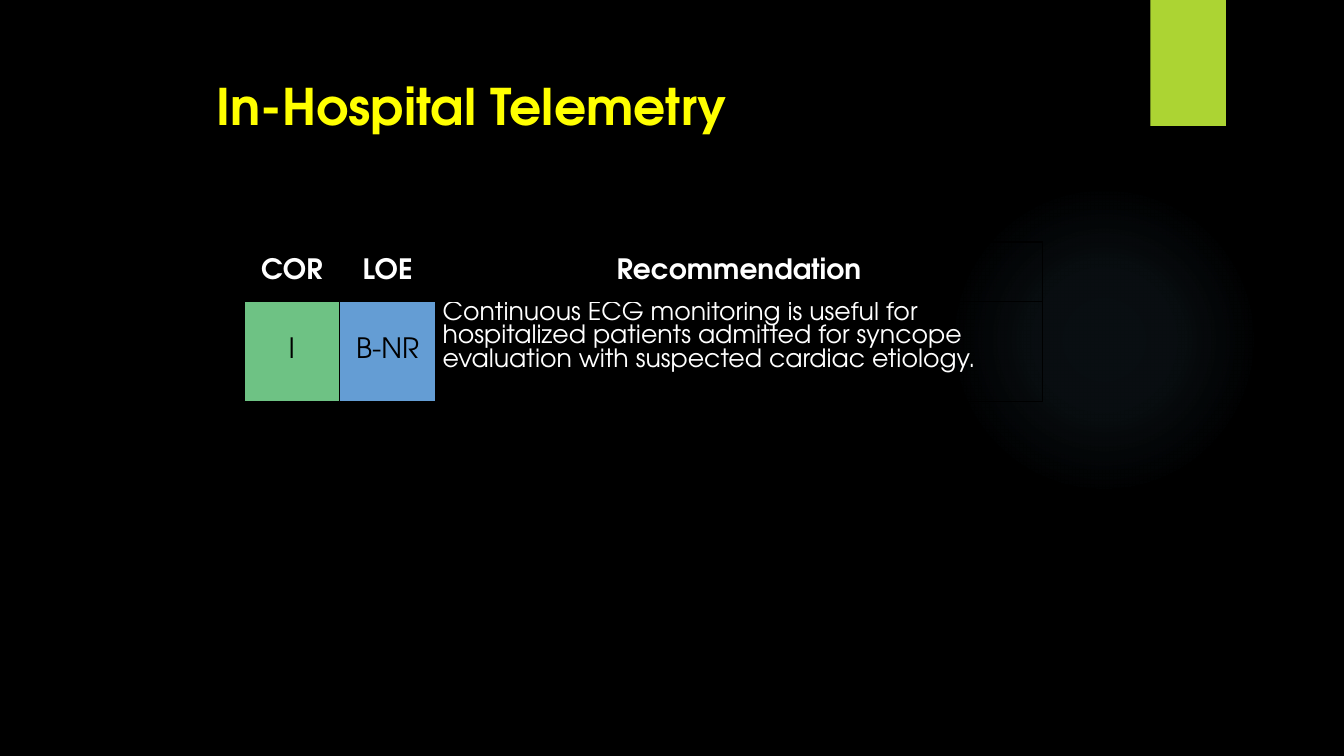
from dataclasses import dataclass

from lxml.etree import SubElement
from pptx import Presentation
from pptx.dml.color import RGBColor
from pptx.enum.shapes import MSO_SHAPE
from pptx.enum.text import MSO_ANCHOR, PP_ALIGN
from pptx.oxml import parse_xml
from pptx.oxml.ns import nsdecls, qn
from pptx.shapes.autoshape import Shape
from pptx.slide import Slide
from pptx.table import _Cell
from pptx.text.text import _Paragraph
from pptx.util import Inches, Pt

FONT = "TeX Gyre Adventor"
BLACK = RGBColor(0x00, 0x00, 0x00)
WHITE = RGBColor(0xFF, 0xFF, 0xFF)
YELLOW = RGBColor(0xFF, 0xFF, 0x00)
LIME = RGBColor(0xAC, 0xD4, 0x33)
GREEN = RGBColor(0x6E, 0xC2, 0x84)
BLUE = RGBColor(0x64, 0x9D, 0xD4)
GLOW = RGBColor(0x7A, 0xC4, 0xF0)
STOPS = ((0, 7), (36, 6), (69, 0))  # position and opacity, in percent
COLS = (0.95, 0.95, 6.02)
ROWS = (0.59, 0.99)


@dataclass
class Entry:
    text: str
    color: RGBColor = WHITE
    fill: RGBColor | None = None
    size: int = 20
    bold: bool = False
    align: PP_ALIGN = PP_ALIGN.CENTER
    anchor: MSO_ANCHOR = MSO_ANCHOR.MIDDLE


GRID = (
    tuple(Entry(head, bold=True) for head in ("COR", "LOE", "Recommendation")),
    (
        Entry("I", BLACK, GREEN),
        Entry("B-NR", BLACK, BLUE),
        Entry(
            "Continuous ECG monitoring is useful for hospitalized patients "
            "admitted for syncope evaluation with suspected cardiac etiology.",
            size=18, align=PP_ALIGN.LEFT, anchor=MSO_ANCHOR.TOP,
        ),
    ),
)


def add_run(para: _Paragraph, text: str, size: int, color: RGBColor, bold: bool) -> None:
    run = para.add_run()
    run.text = text
    run.font.name = FONT
    run.font.size = Pt(size)
    run.font.bold = bold
    run.font.color.rgb = color


def add_shape(slide: Slide, kind: MSO_SHAPE, left: float, top: float,
              width: float, height: float) -> Shape:
    shape = slide.shapes.add_shape(
        kind, Inches(left), Inches(top), Inches(width), Inches(height))
    shape.shadow.inherit = False
    shape.line.fill.background()
    return shape


def add_glow(slide: Slide) -> None:
    """Add the faint round light, fading out from its centre."""
    glow = add_shape(slide, MSO_SHAPE.OVAL, 9.41, 1.83, 3.08, 3.08)
    stops = "".join(
        f'<a:gs pos="{pos * 1000}"><a:srgbClr val="{GLOW}">'
        f'<a:alpha val="{alpha * 1000}"/></a:srgbClr></a:gs>'
        for pos, alpha in STOPS)
    grad = parse_xml(
        f'<a:gradFill {nsdecls("a")} rotWithShape="1"><a:gsLst>{stops}</a:gsLst>'
        '<a:path path="circle"><a:fillToRect l="50000" t="50000" r="50000" b="50000"/>'
        '</a:path></a:gradFill>')
    glow._element.spPr.find(qn("a:prstGeom")).addnext(grad)


def add_title(slide: Slide) -> None:
    box = slide.shapes.add_textbox(Inches(2.05), Inches(0.7), Inches(9), Inches(0.92))
    frame = box.text_frame
    frame.word_wrap = True
    add_run(frame.paragraphs[0], "In-Hospital Telemetry", 36, YELLOW, True)


def add_border(cell: _Cell) -> None:
    props = cell._tc.get_or_add_tcPr()
    for side in ("lnL", "lnR", "lnT", "lnB"):
        line = SubElement(props, qn(f"a:{side}"), w=str(Pt(1)))
        fill = SubElement(line, qn("a:solidFill"))
        SubElement(fill, qn("a:srgbClr"), val=str(BLACK))


def fill_cell(cell: _Cell, entry: Entry) -> None:
    add_border(cell)
    cell.margin_left = cell.margin_right = Inches(0.07)
    cell.margin_top = cell.margin_bottom = 0
    cell.vertical_anchor = entry.anchor
    if entry.fill is None:
        cell.fill.background()
    else:
        cell.fill.solid()
        cell.fill.fore_color.rgb = entry.fill
    para = cell.text_frame.paragraphs[0]
    para.alignment = entry.align
    add_run(para, entry.text, entry.size, entry.color, entry.bold)


def add_grid(slide: Slide) -> None:
    table = slide.shapes.add_table(
        len(ROWS), len(COLS), Inches(2.42), Inches(2.4),
        Inches(sum(COLS)), Inches(sum(ROWS))).table
    table.first_row = table.horz_banding = False
    for col, width in zip(table.columns, COLS):
        col.width = Inches(width)
    for row, height, line in zip(table.rows, ROWS, GRID):
        row.height = Inches(height)
        for cell, entry in zip(row.cells, line):
            fill_cell(cell, entry)


def main() -> None:
    deck = Presentation()
    deck.slide_width, deck.slide_height = Inches(13.33), Inches(7.5)
    slide = deck.slides.add_slide(deck.slide_layouts[6])
    slide.background.fill.solid()
    slide.background.fill.fore_color.rgb = BLACK
    add_glow(slide)
    tab = add_shape(slide, MSO_SHAPE.RECTANGLE, 11.41, 0, 0.75, 1.25)
    tab.fill.solid()
    tab.fill.fore_color.rgb = LIME
    add_title(slide)
    add_grid(slide)
    deck.save("out.pptx")


if __name__ == "__main__":
    main()
